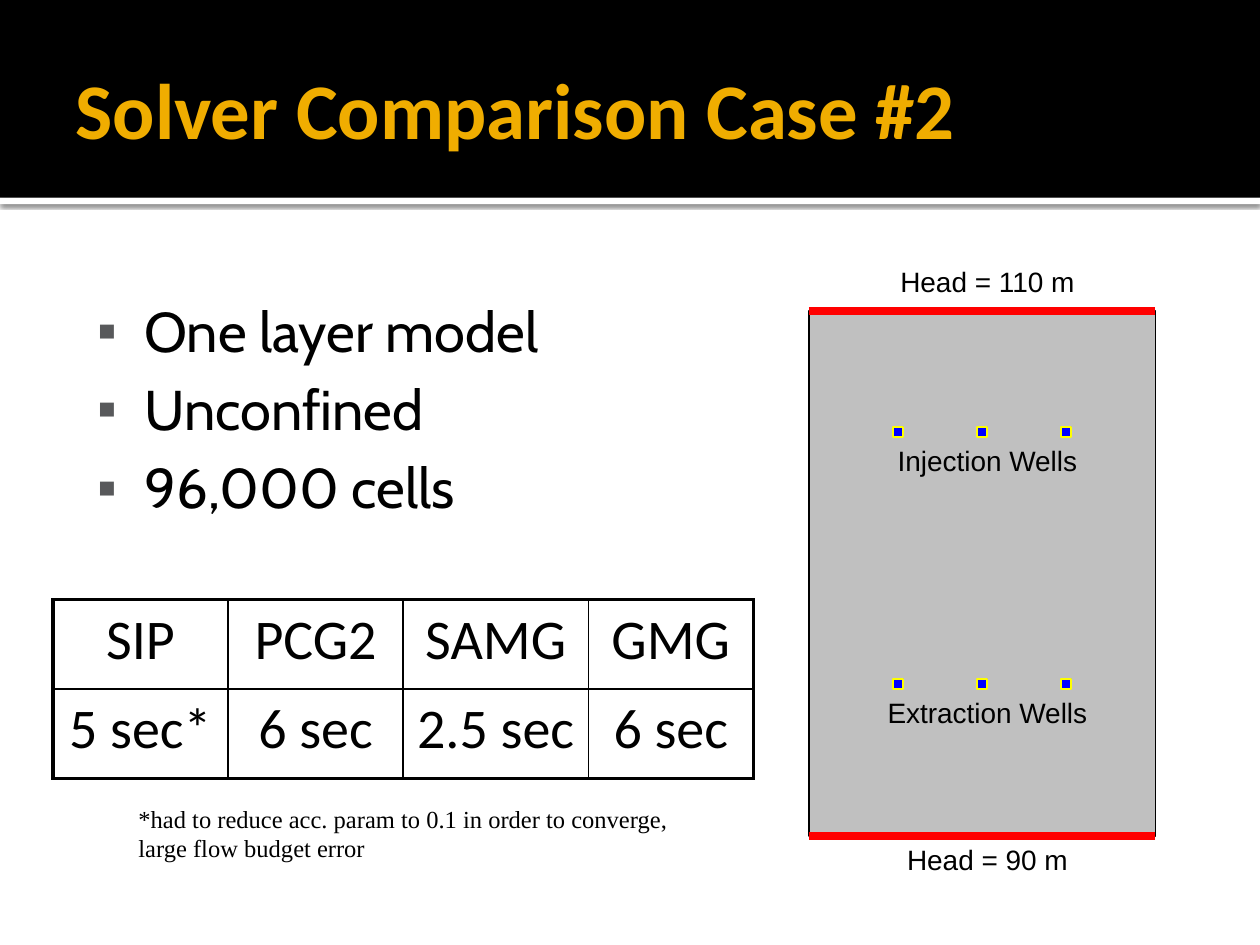
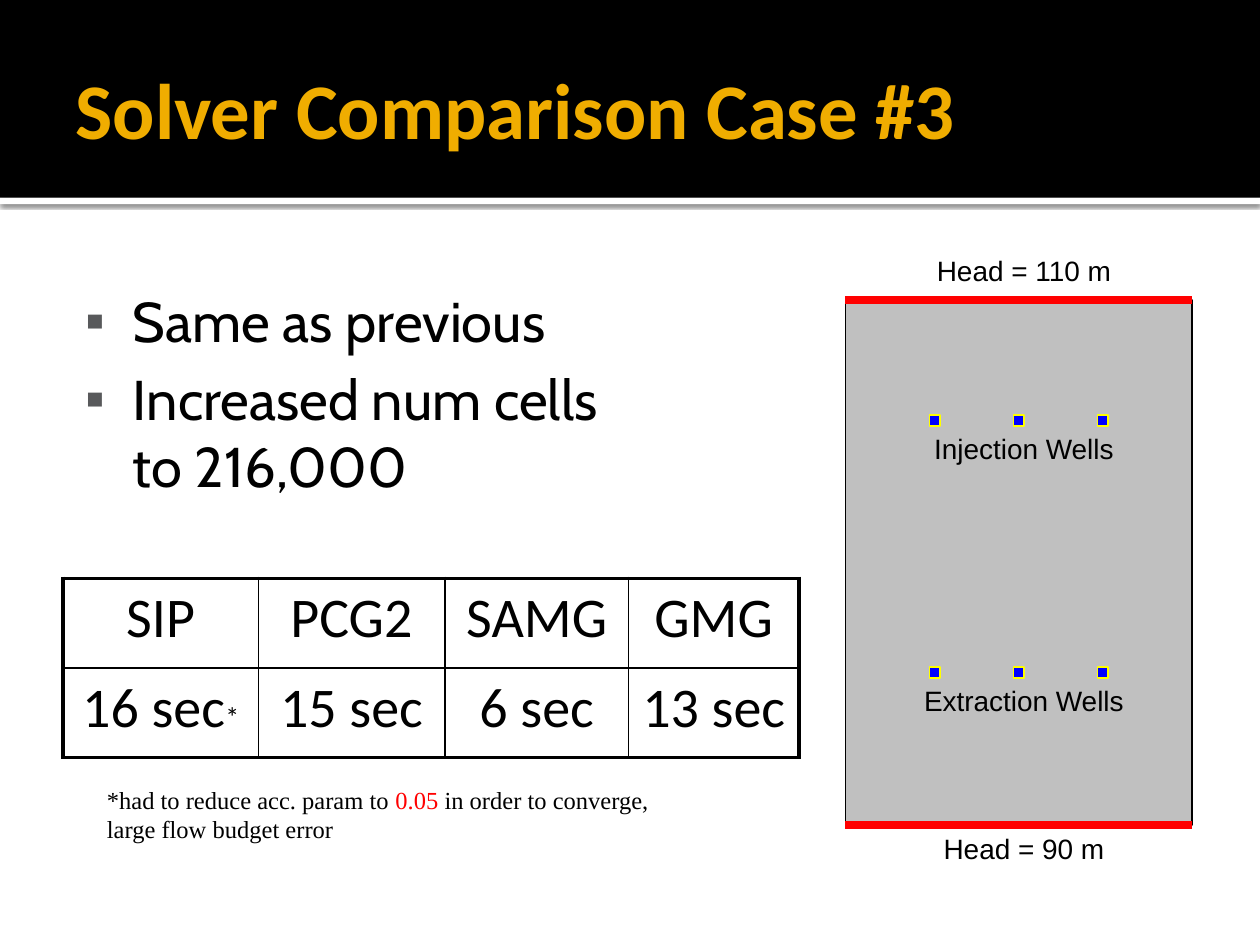
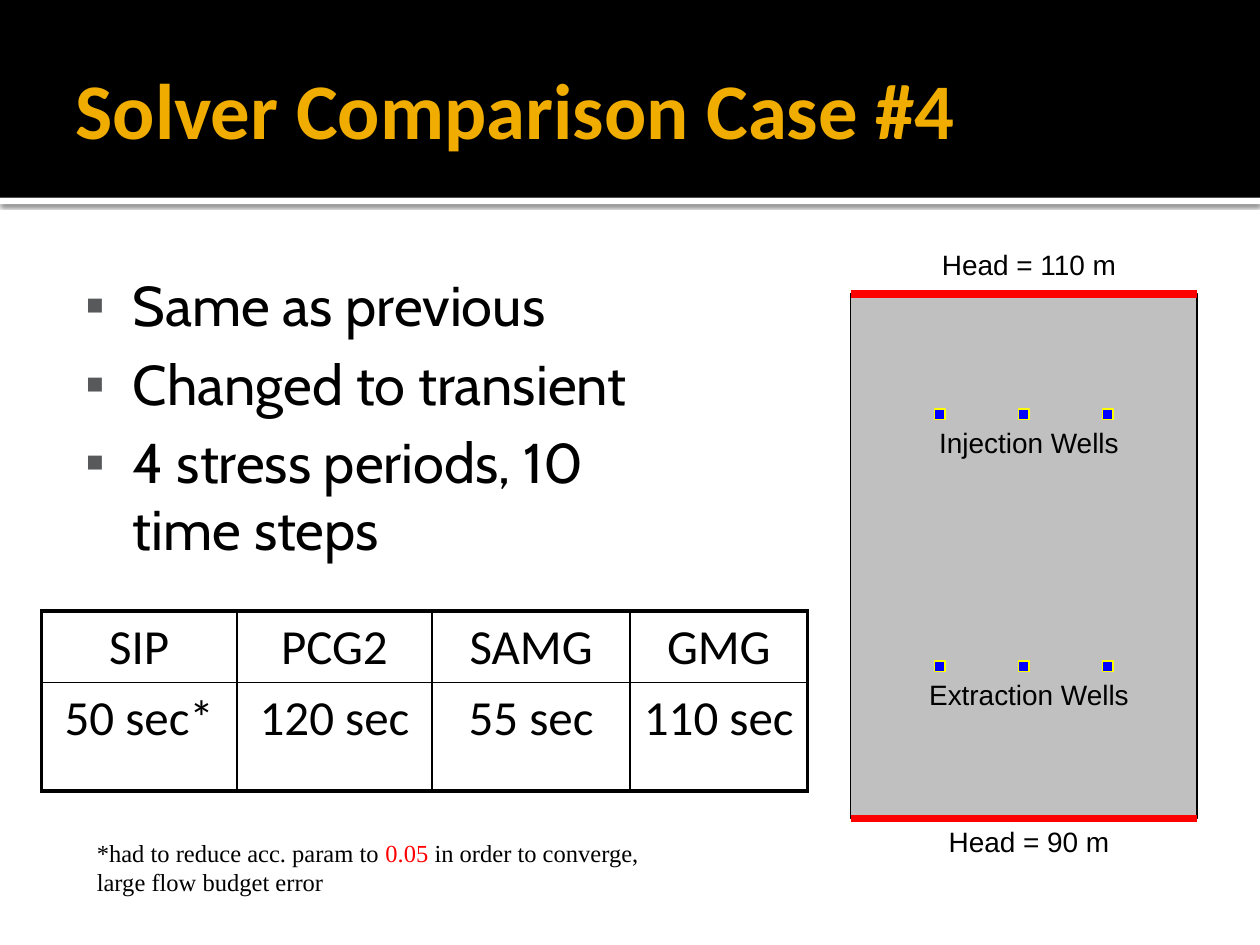
from lxml import etree
from pptx import Presentation
from pptx.dml.color import RGBColor
from pptx.enum.shapes import MSO_CONNECTOR, MSO_SHAPE
from pptx.enum.text import MSO_ANCHOR, MSO_AUTO_SIZE, PP_ALIGN
from pptx.oxml.ns import qn
from pptx.util import Inches, Pt

RECTANGLE = MSO_SHAPE.RECTANGLE
STRAIGHT = MSO_CONNECTOR.STRAIGHT
MIDDLE = MSO_ANCHOR.MIDDLE
NO_FIT, GROW = MSO_AUTO_SIZE.NONE, MSO_AUTO_SIZE.SHAPE_TO_FIT_TEXT
LEFT, CENTER = PP_ALIGN.LEFT, PP_ALIGN.CENTER

COLOURS = {
    "black": "000000", "white": "FFFFFF", "title": "F0AD00",
    "bullet": "58595B", "aquifer": "C0C0C0", "head": "FF0000",
    "well": "0000FF", "well edge": "FFFF00",
}
SOLVERS = ["SIP", "PCG2", "SAMG", "GMG"]
THIN, THICK = 1, 2.25
UNIT = 1 / 12  # grid step of the aquifer sketch, in inches

# Places are (left, top, width, height) in inches
CASES = [
    {"number": 2,
     "points": ["One layer model", "Unconfined", "96,000 cells"],
     "points at": (0.67, 2.3, 4.33, 2.08),
     "aquifer at": (6.42, 2.47),
     "table at": (0.42, 4.76), "columns": [1.39, 1.39, 1.47, 1.31],
     "rows": [0.71, 0.71], "table size": 32,
     "times": ["5 sec*", "6 sec", "2.5 sec", "6 sec"], "small star": False,
     "note at": (1, 6.33, 4.42, 0.57), "param": "0.1", "param colour": "black"},
    {"number": 3,
     "points": ["Same as previous", "Increased num cells to 216,000"],
     "points at": (0.58, 2.22, 4.5, 2.25),
     "aquifer at": (6.71, 2.38),
     "table at": (0.5, 4.59), "columns": [1.55, 1.48, 1.46, 1.35],
     "rows": [0.71, 0.71], "table size": 32,
     "times": ["16 sec*", "15 sec", "6 sec", "13 sec"], "small star": True,
     "note at": (0.75, 6.18, 4.83, 0.57), "param": "0.05", "param colour": "head"},
    {"number": 4,
     "points": ["Same as previous", "Changed to transient",
                "4 stress periods, 10 time steps"],
     "points at": (0.58, 2.1, 4.5, 2.25),
     "aquifer at": (6.75, 2.33),
     "table at": (0.33, 4.85), "columns": [1.55, 1.55, 1.57, 1.41],
     "rows": [0.54, 0.86], "table size": 28,
     "times": ["50 sec*", "120 sec", "55 sec", "110 sec"], "small star": False,
     "note at": (0.67, 6.6, 4.92, 0.57), "param": "0.05", "param colour": "head"},
]


def write(para, text, size, font, colour="black", bold=False, align=LEFT):
    """Append one formatted span of text to a paragraph."""
    para.alignment = align
    span = para.add_run()
    span.text = text
    span.font.size = Pt(size)
    span.font.name = font
    span.font.bold = bold
    span.font.color.rgb = RGBColor.from_string(COLOURS[colour])


def add_box(page, place, fill, edge=None):
    """Draw a flat rectangle, with a thin edge if one is named."""
    box = page.shapes.add_shape(RECTANGLE, *map(Inches, place))
    box.shadow.inherit = False
    box.fill.solid()
    box.fill.fore_color.rgb = RGBColor.from_string(COLOURS[fill])
    if edge:
        box.line.color.rgb = RGBColor.from_string(COLOURS[edge])
        box.line.width = Pt(THIN)
    else:
        box.line.fill.background()
    return box


deck = Presentation()
deck.slide_width, deck.slide_height = Inches(10), Inches(7.5)
pages = [deck.slides.add_slide(deck.slide_layouts[1]) for case in CASES]

# Shared bands: a white strip with a shadow and the black header, on the master
strip = add_box(pages[0], (0, 1.57, 10, 0.05), "white")
header = add_box(pages[0], (0, 0, 10, 1.57), "black")
shadow = etree.SubElement(
    strip.element.spPr.find(qn("a:effectLst")), qn("a:outerShdw"),
    blurRad=str(Pt(2.5)), dist=str(Pt(0.8)), dir="5400000", rotWithShape="0")
tone = etree.SubElement(shadow, qn("a:srgbClr"), val=COLOURS["black"])
etree.SubElement(tone, qn("a:alpha"), val="60000")
for number, band in enumerate([strip, header]):
    band.element.xpath(".//p:cNvPr")[0].set("id", str(20 + number))
    deck.slide_master.shapes.element.insert(2 + number, band.element)

for page, case in zip(pages, CASES):
    # Title
    title = page.shapes.title
    title.left, title.top, title.width, title.height = map(
        Inches, (0.5, 0.17, 9, 1.37))
    frame = title.text_frame
    frame.auto_size = NO_FIT
    frame.vertical_anchor = MIDDLE
    frame.margin_left = Inches(0.1)
    frame.margin_top = frame.margin_right = frame.margin_bottom = Inches(0.05)
    write(frame.paragraphs[0], f"Solver Comparison Case #{case['number']}",
          size=45, font="Calibri", colour="title", bold=True)

    # Bullet points
    body = page.placeholders[1]
    body.left, body.top, body.width, body.height = map(Inches, case["points at"])
    frame = body.text_frame
    frame.auto_size = NO_FIT
    for number, point in enumerate(case["points"]):
        para = frame.add_paragraph() if number else frame.paragraphs[0]
        write(para, point, size=32, font="Cabin")
        para.space_before = Pt(6.4)
        settings = para._p.get_or_add_pPr()
        bullet_colour = etree.SubElement(settings, qn("a:buClr"))
        etree.SubElement(bullet_colour, qn("a:srgbClr"), val=COLOURS["bullet"])
        etree.SubElement(settings, qn("a:buChar"), char="▪")

    # Aquifer with a fixed head along its top and bottom
    left, top = case["aquifer at"]
    width, height = 33 * UNIT, 50 * UNIT
    add_box(page, (left, top, width, height), "aquifer", "black")
    for level in (top, top + height):
        head = page.shapes.add_connector(
            STRAIGHT, *map(Inches, (left, level, left + width, level)))
        head.line.color.rgb = RGBColor.from_string(COLOURS["head"])
        head.line.width = Pt(4.5)
        etree.SubElement(head.element.spPr, qn("a:effectLst"))

    # Two rows of wells
    for row in (11, 35):
        for column in (8, 16, 24):
            add_box(page, (left + column * UNIT, top + row * UNIT, UNIT, UNIT),
                    "well", "well edge")

    # Labels of the sketch
    for row, label in [(12, "Injection Wells"), (36, "Extraction Wells"),
                       (-5, "Head = 110 m"), (50, "Head = 90 m")]:
        box = page.shapes.add_textbox(*map(
            Inches, (left + 6 * UNIT, top + row * UNIT, 22 * UNIT, 0.37)))
        box.text_frame.word_wrap = True
        box.text_frame.auto_size = GROW
        write(box.text_frame.paragraphs[0], label, size=16, font="Arial", align=CENTER)

    # Table of run times
    table = page.shapes.add_table(2, len(SOLVERS), *map(
        Inches, (*case["table at"], sum(case["columns"]), sum(case["rows"])))).table
    table.first_row = table.horz_banding = False
    for column, size in zip(table.columns, case["columns"]):
        column.width = Inches(size)
    for row, size in zip(table.rows, case["rows"]):
        row.height = Inches(size)
    last = len(SOLVERS) - 1
    for row, texts in enumerate([SOLVERS, case["times"]]):
        for column, text in enumerate(texts):
            cell = table.cell(row, column)
            para = cell.text_frame.paragraphs[0]
            star = case["small star"] and text.endswith("*")
            write(para, text.rstrip("*") if star else text,
                  size=case["table size"], font="Calibri", align=CENTER)
            if star:
                write(para, "*", size=16, font="Calibri", align=CENTER)
            outer = {"a:lnL": column == 0, "a:lnR": column == last,
                     "a:lnT": row == 0, "a:lnB": row == 1}
            settings = cell._tc.get_or_add_tcPr()
            for side, is_outer in outer.items():
                border = etree.SubElement(
                    settings, qn(side), w=str(Pt(THICK if is_outer else THIN)))
                paint = etree.SubElement(border, qn("a:solidFill"))
                etree.SubElement(paint, qn("a:srgbClr"), val=COLOURS["black"])
            cell.fill.background()

    # Footnote
    note = page.shapes.add_textbox(*map(Inches, case["note at"]))
    note.text_frame.word_wrap = True
    note.text_frame.auto_size = GROW
    for text, colour in [("*had to reduce acc. param to ", "black"),
                         (case["param"], case["param colour"]),
                         (" in order to converge, large flow budget error", "black")]:
        write(note.text_frame.paragraphs[0], text, size=14,
              font="Times New Roman", colour=colour)

deck.save("out.pptx")
